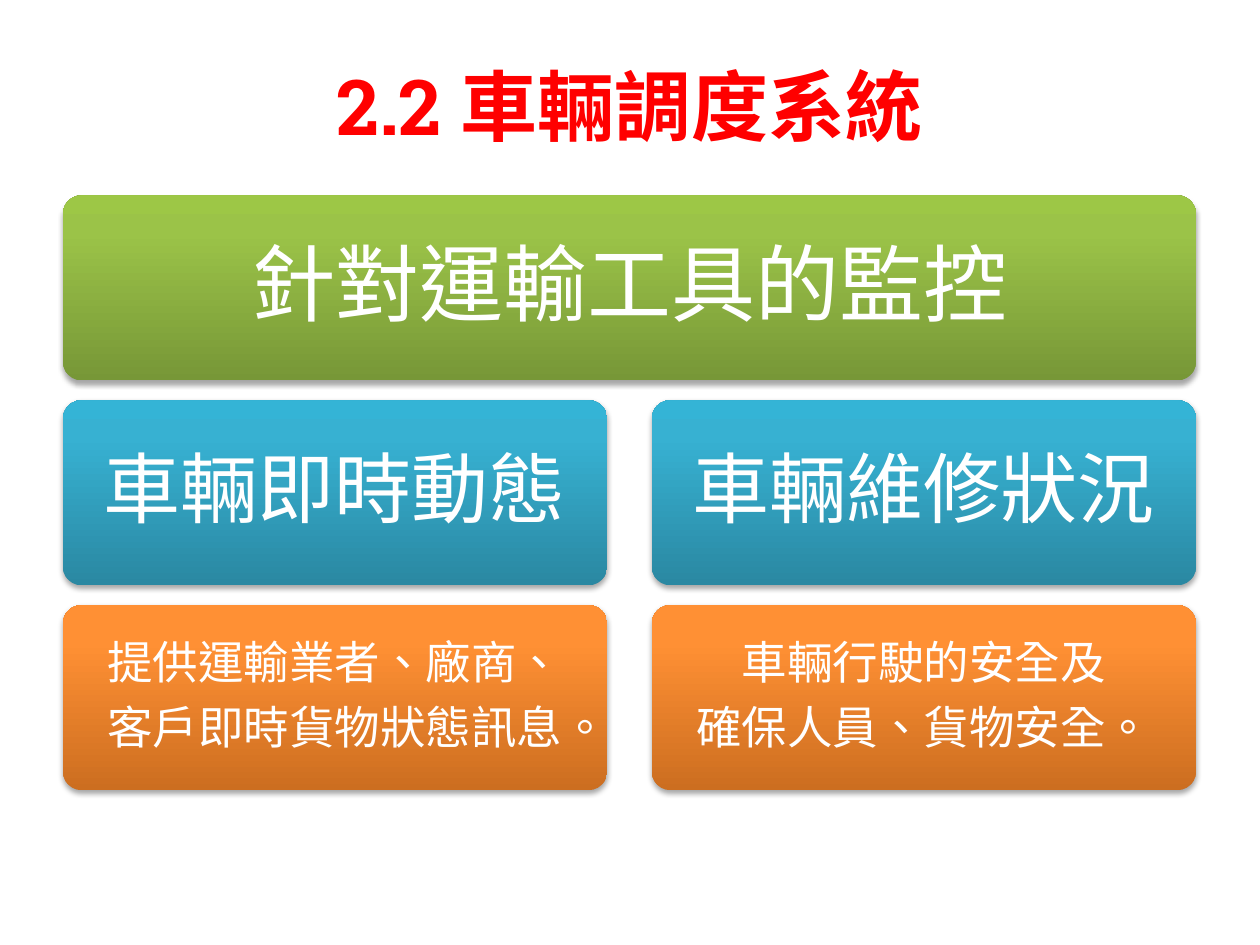
from copy import deepcopy
from dataclasses import dataclass

from lxml import etree
from pptx import Presentation
from pptx import util as u
from pptx.dml.color import RGBColor
from pptx.enum import shapes, text
from pptx.oxml import ns


@dataclass(frozen=True)
class Theme:
    font: str = "Roboto Slab"
    language: str = "zh-TW"
    title_color: str = "FF0000"
    card_text: str = "FFFFFF"
    shadow: str = "000000"
    green: tuple[str, ...] = ("779737", "9BC348", "9DC746")
    blue: tuple[str, ...] = ("2A88A2", "37B1D2", "34B4D6")
    orange: tuple[str, ...] = ("CC6E20", "FF9034", "FF9136")
    stops: tuple[float, ...] = (0, 0.8, 1)
    title_size: int = 44
    heading_size: int = 48
    topic_size: int = 44
    detail_size: int = 26


@dataclass(frozen=True)
class Card:
    row: int
    left: float
    width: float
    wording: str
    size: int
    inset: float
    gradient: tuple[str, ...]


THEME = Theme()
MARGIN = 1.27
FULL_WIDTH = 22.84
COLUMN_WIDTH = 10.97
RIGHT_COLUMN = MARGIN + FULL_WIDTH - COLUMN_WIDTH
FIRST_ROW = 3.94
ROW_PITCH = 4.13
CARD_HEIGHT = 3.73

COLUMNS = (
    (MARGIN, "車輛即時動態", "提供運輸業者、廠商、\n客戶即時貨物狀態訊息。"),
    (RIGHT_COLUMN, "車輛維修狀況", "車輛行駛的安全及\n確保人員、貨物安全。"),
)


def add_element(parent, tag: str, **attributes: str):
    return etree.SubElement(parent, ns.qn(tag), attributes)


def write_text(shape, wording: str, size: int, color: str, inset: float, bold: bool = False) -> None:
    frame = shape.text_frame
    frame.text = wording
    frame.word_wrap = True
    frame.vertical_anchor = text.MSO_ANCHOR.MIDDLE
    frame.margin_left = frame.margin_right = u.Cm(inset)
    frame.margin_top = frame.margin_bottom = u.Cm(inset)
    for paragraph in frame.paragraphs:
        paragraph.alignment = text.PP_ALIGN.CENTER
        for run in paragraph.runs:
            run.font.name = THEME.font
            run.font.size = u.Pt(size)
            run.font.bold = bold
            run.font.color.rgb = RGBColor.from_string(color)
            properties = run._r.get_or_add_rPr()
            properties.set("lang", THEME.language)
            add_element(properties, "a:ea", typeface=THEME.font)


def paint_gradient(shape, colors: tuple[str, ...]) -> None:
    shape.fill.gradient()
    shape.fill.gradient_angle = 90
    stop_list = shape._element.spPr.find(ns.qn("a:gradFill")).find(ns.qn("a:gsLst"))
    stop_list.append(deepcopy(stop_list[-1]))
    for stop, color, position in zip(shape.fill.gradient_stops, colors, THEME.stops):
        stop.color.rgb = RGBColor.from_string(color)
        stop.position = position


def add_soft_shadow(shape) -> None:
    shape.shadow.inherit = False
    effects = shape._element.spPr.find(ns.qn("a:effectLst"))
    shadow = add_element(effects, "a:outerShdw", blurRad="40000", dist="23000",
                         dir="5400000", rotWithShape="0")
    color = add_element(shadow, "a:srgbClr", val=THEME.shadow)
    add_element(color, "a:alpha", val="35000")


def add_title(slide, wording: str) -> None:
    title = slide.shapes.add_textbox(u.Cm(MARGIN), u.Cm(0.53), u.Cm(22.86), u.Cm(3.18))
    write_text(title, wording, THEME.title_size, THEME.title_color, 0.25, bold=True)


def add_card(slide, card: Card) -> None:
    shape = slide.shapes.add_shape(
        shapes.MSO_SHAPE.ROUNDED_RECTANGLE,
        u.Cm(card.left), u.Cm(FIRST_ROW + card.row * ROW_PITCH),
        u.Cm(card.width), u.Cm(CARD_HEIGHT))
    shape.adjustments[0] = 0.1
    shape.line.fill.background()
    paint_gradient(shape, card.gradient)
    add_soft_shadow(shape)
    write_text(shape, card.wording, card.size, THEME.card_text, card.inset)
    for paragraph in shape.text_frame.paragraphs:
        paragraph.line_spacing = 0.9
        space_after = add_element(paragraph._p.get_or_add_pPr(), "a:spcAft")
        add_element(space_after, "a:spcPct", val="35000")


def main() -> None:
    presentation = Presentation()
    presentation.slide_width = u.Cm(25.4)
    presentation.slide_height = u.Cm(19.05)
    slide = presentation.slides.add_slide(presentation.slide_layouts[6])

    add_title(slide, "2.2 車輛調度系統")
    add_card(slide, Card(0, MARGIN, FULL_WIDTH, "針對運輸工具的監控",
                         THEME.heading_size, 0.61, THEME.green))
    for left, topic, detail in COLUMNS:
        add_card(slide, Card(1, left, COLUMN_WIDTH, topic, THEME.topic_size, 0.58, THEME.blue))
        add_card(slide, Card(2, left, COLUMN_WIDTH, detail, THEME.detail_size, 0.38, THEME.orange))

    presentation.save("out.pptx")


if __name__ == "__main__":
    main()
